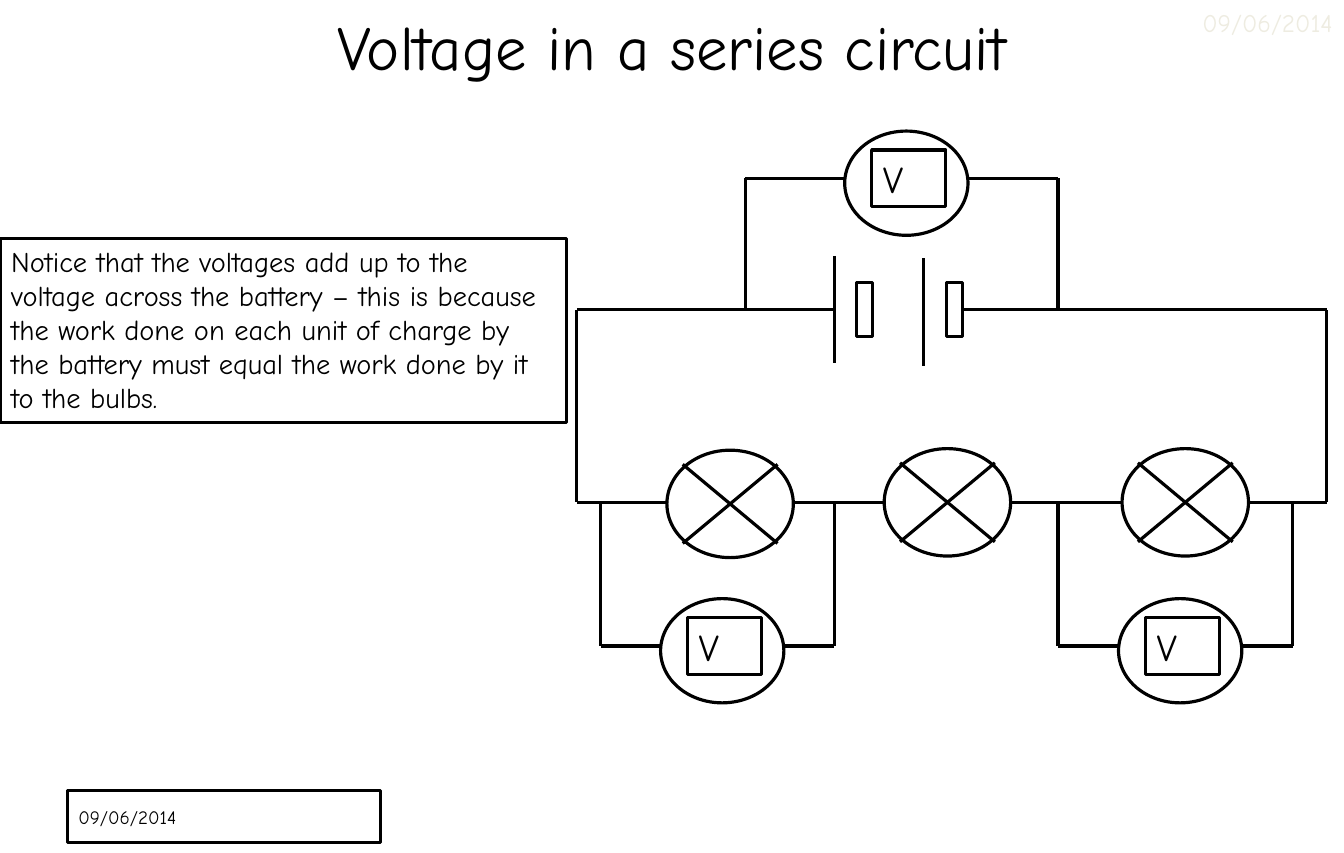
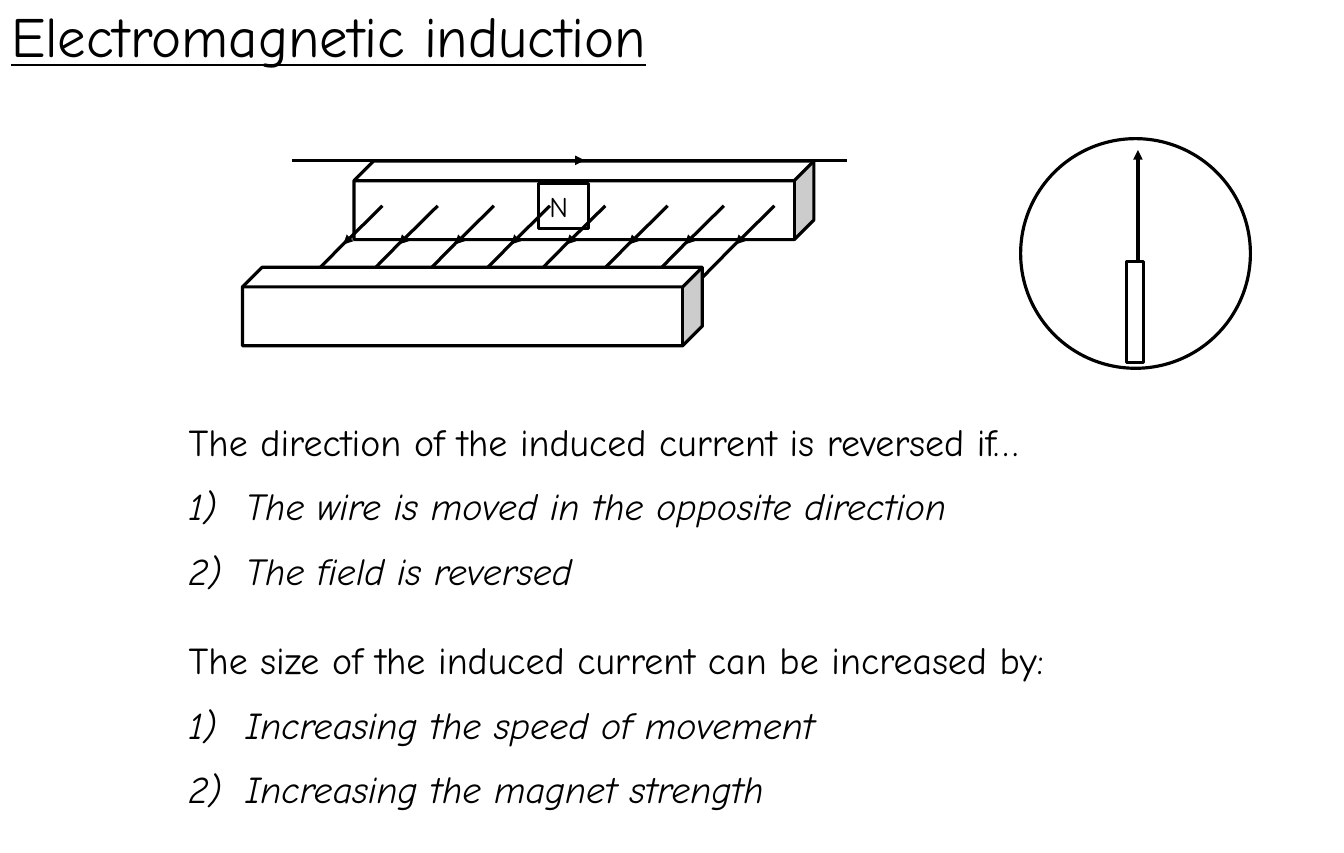
from lxml.etree import SubElement
from pptx import Presentation
from pptx.dml.color import RGBColor
from pptx.enum.shapes import MSO_CONNECTOR as Connector, MSO_SHAPE as Preset
from pptx.enum.text import MSO_ANCHOR as Anchor, PP_ALIGN as Align
from pptx.oxml.ns import qn
from pptx.util import Pt

BLACK = RGBColor(0x00, 0x00, 0x00)
WHITE = RGBColor(0xFF, 0xFF, 0xFF)
PALE = RGBColor(0xEE, 0xEC, 0xE1)
FONT = "Comic Neue"
STROKE = 2
WIDTH, HEIGHT = 850.4, 540
RIGHT_SIDE = 3
DATE = "09/06/2014"


class Lesson:
    """Holds the drawing style and the slide being drawn."""

    def __init__(self):
        self.deck = Presentation()
        self.deck.slide_width, self.deck.slide_height = Pt(WIDTH), Pt(HEIGHT)
        self.slide = None

    def new_slide(self):
        self.slide = self.deck.slides.add_slide(self.deck.slide_layouts[6])

    def set_words(self, paragraph, words, size, color=BLACK, align=Align.LEFT):
        paragraph.text = words
        paragraph.alignment = align
        font = paragraph.font
        font.name, font.size, font.color.rgb = FONT, Pt(size), color
        return font

    def text(self, left, top, width, height, words, size,
             color=BLACK, align=Align.LEFT, anchor=Anchor.TOP):
        box = self.slide.shapes.add_textbox(Pt(left), Pt(top), Pt(width), Pt(height))
        frame = box.text_frame
        frame.word_wrap, frame.vertical_anchor = True, anchor
        self.set_words(frame.paragraphs[0], words, size, color, align)
        return frame

    def outline(self, preset, left, top, width, height):
        shape = self.slide.shapes.add_shape(
            preset, Pt(left), Pt(top), Pt(width), Pt(height))
        shape.shadow.inherit = False
        shape.fill.solid()
        shape.fill.fore_color.rgb = WHITE
        shape.line.color.rgb, shape.line.width = BLACK, Pt(STROKE)
        return shape

    def label(self, left, top, width, height, words, size, anchor=Anchor.TOP):
        shape = self.outline(Preset.RECTANGLE, left, top, width, height)
        shape.text_frame.word_wrap = True
        shape.text_frame.vertical_anchor = anchor
        self.set_words(shape.text_frame.paragraphs[0], words, size)

    def line(self, x1, y1, x2, y2, arrow=False):
        connector = self.slide.shapes.add_connector(
            Connector.STRAIGHT, Pt(x1), Pt(y1), Pt(x2), Pt(y2))
        connector.line.color.rgb, connector.line.width = BLACK, Pt(STROKE)
        properties = connector._element.spPr
        if arrow:
            SubElement(properties.find(qn("a:ln")), qn("a:tailEnd"), type="triangle")
        SubElement(properties, qn("a:effectLst"))
        return connector

    def wire(self, *corners):
        for start, end in zip(corners, corners[1:]):
            self.line(*start, *end)

    def lamp(self, x, y):
        self.outline(Preset.OVAL, x - 40, y - 34, 80, 68)
        for rise in (25, -25):
            self.line(x - 30, y + rise, x + 30, y - rise)

    def voltmeter(self, left, right, y, rail):
        middle = (left + right) / 2
        self.wire((left, rail), (left, y), (right, y), (right, rail))
        self.outline(Preset.OVAL, middle - 36, y - 30, 78, 66)
        self.label(middle - 19, y - 18, 47, 36, "V", 24)

    def numbered(self, top, heading, *points):
        frame = self.text(112.3, top, 720, 124, heading, 24)
        for point in points:
            paragraph = frame.add_paragraph()
            self.set_words(paragraph, point, 24).italic = True
            paragraph.space_before = Pt(12)
            properties = paragraph._p.get_or_add_pPr()
            properties.set("marL", str(Pt(36)))
            properties.set("indent", str(Pt(-36)))
            SubElement(properties, qn("a:buAutoNum"), type="arabicParenR")
            properties.append(properties.find(qn("a:defRPr")))


def series_circuit(lesson):
    lesson.new_slide()
    lesson.text(700, 0, WIDTH - 700, 28, DATE, 16, PALE, Align.RIGHT, Anchor.MIDDLE)
    lesson.label(42.5, 500.5, 198.5, 33, DATE, 12, Anchor.MIDDLE)
    lesson.text(0, 0, WIDTH, 57.6, "Voltage in a series circuit", 39.6,
                align=Align.CENTER, anchor=Anchor.MIDDLE)

    left, right, battery, bulbs = 365, 839.5, 196, 318
    lesson.wire((528, battery), (left, battery), (left, bulbs),
                (right, bulbs), (right, battery))
    for long_plate, top, short_plate in ((528, 162, 542), (584.5, 163.5, 599)):
        lesson.line(long_plate, top, long_plate, top + 68)
        terminal = lesson.outline(Preset.RECTANGLE, short_plate, battery - 17, 10, 34)
    lesson.line(609, battery, right, battery).begin_connect(terminal, RIGHT_SIDE)

    for x, y in ((462, 319), (599.5, bulbs), (750, bulbs)):
        lesson.lamp(x, y)
    for start, end, y, rail in ((471.5, 669.5, 113, battery),
                                (380, 528, 409, bulbs),
                                (669.5, 818, 409, bulbs)):
        lesson.voltmeter(start, end, y, rail)

    lesson.label(0, 151, 358.5, 116.5,
                 "Notice that the voltages add up to the voltage across the battery – "
                 "this is because the work done on each unit of charge by the battery "
                 "must equal the work done by it to the bulbs.", 18)


def induction(lesson):
    lesson.new_slide()
    magnet = 291, 49.7
    lesson.outline(Preset.CUBE, 224, 102, *magnet)
    lesson.label(340.6, 116, 31.7, 28.8, "N", 18)
    for x in (242, 277, 312.5, 348, 383, 422.5, 458, 490):
        lesson.line(x, 130.3, x - 24.8, 154.8, arrow=True)
        lesson.line(x - 64, 194.4, x - 21.5, 151.2)
    lesson.line(185, 101.5, 535.7, 101.5)
    lesson.line(302.4, 101.5, 370, 101.5, arrow=True)
    lesson.outline(Preset.CUBE, 153.4, 169.2, *magnet)

    lesson.outline(Preset.OVAL, 645.8, 87.8, 145.4, 145.4)
    lesson.line(720, 226, 720, 95, arrow=True)
    lesson.outline(Preset.RECTANGLE, 712.8, 165.6, 10.8, 64)

    lesson.numbered(261.4, "The direction of the induced current is reversed if…",
                    "The wire is moved in the opposite direction",
                    "The field is reversed")
    lesson.numbered(399.6, "The size of the induced current can be increased by:",
                    "Increasing the speed of movement",
                    "Increasing the magnet strength")
    title = lesson.text(0, -2.9, 473.8, 90, "Electromagnetic induction", 36)
    title.paragraphs[0].font.underline = True


def main():
    lesson = Lesson()
    series_circuit(lesson)
    induction(lesson)
    lesson.deck.save("out.pptx")


if __name__ == "__main__":
    main()
